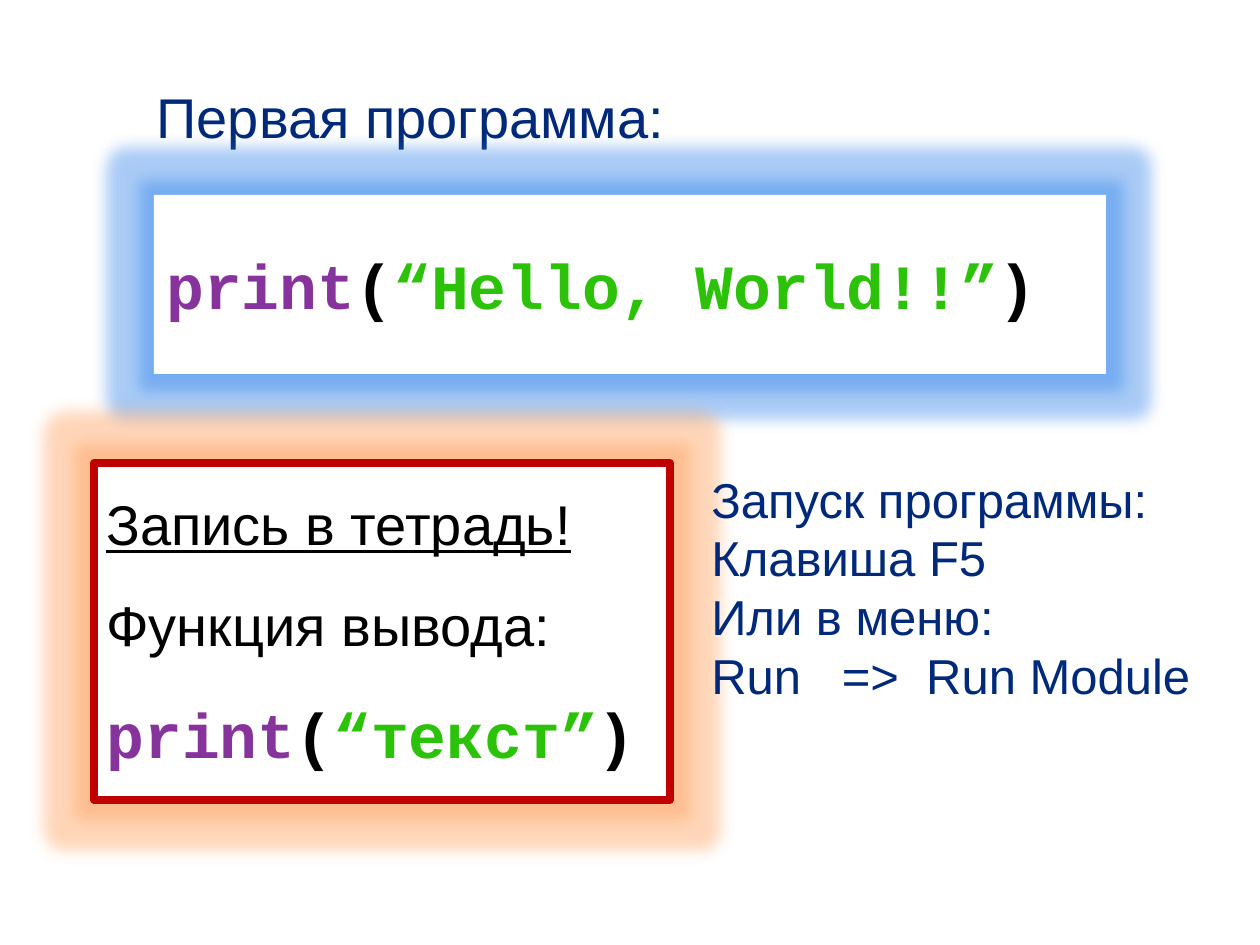
import pptx
import pptx.util
import pptx.dml.color
import pptx.enum.shapes
import pptx.enum.text
import pptx.oxml
import pptx.oxml.ns

PX = 914400 // 126
NAVY, BLACK, PURPLE, GREEN, RED = "00297A", "000000", "86349C", "2DC20A", "C00000"
WHITE, BLUE_GLOW, ORANGE_GLOW = "FFFFFF", "2A7FEA", "FF9A50"
GLOW_RADIUS = pptx.util.Pt(18)
GLOW_ALPHA = 40000

TITLE = "Первая программа:"
LAUNCH = ["Запуск программы:", "Клавиша F5", "Или в меню:", "Run   =>  Run Module"]
HEADING = "Запись в тетрадь!"
SUBHEADING = "Функция вывода:"


def print_call(argument):
    return [("print", PURPLE), ("(", BLACK), (f"“{argument}”", GREEN), (")", BLACK)]


def color(value):
    return pptx.dml.color.RGBColor.from_string(value)


def place(shape, left, top, width, height):
    shape.left, shape.top = left * PX, top * PX
    shape.width, shape.height = width * PX, height * PX


def write(shape, lines, size, first=True, spacing=None, font="Arial", bold=False, underline=False):
    frame = shape.text_frame
    for index, spans in enumerate(lines):
        para = frame.paragraphs[0] if first and index == 0 else frame.add_paragraph()
        para.alignment = pptx.enum.text.PP_ALIGN.LEFT
        para.line_spacing = spacing
        for text, hue in spans:
            span = para.add_run()
            span.text = text
            span.font.size = pptx.util.Pt(size)
            span.font.name = font
            span.font.bold = bold
            span.font.underline = underline
            span.font.color.rgb = color(hue)


def glowing_box(page, bounds, glow, outline=None):
    box = page.shapes.add_shape(pptx.enum.shapes.MSO_SHAPE.RECTANGLE, 0, 0, 0, 0)
    place(box, *bounds)
    box.fill.solid()
    box.fill.fore_color.rgb = color(WHITE)
    if outline:
        box.line.color.rgb = color(outline)
        box.line.width = pptx.util.Pt(4.5)
    else:
        box.line.fill.background()
    box.shadow.inherit = False
    effects = box.element.spPr.find(pptx.oxml.ns.qn("a:effectLst"))
    effects.append(pptx.oxml.parse_xml(
        f'<a:glow {pptx.oxml.ns.nsdecls("a")} rad="{GLOW_RADIUS}">'
        f'<a:srgbClr val="{glow}"><a:alpha val="{GLOW_ALPHA}"/></a:srgbClr></a:glow>'))
    box.text_frame.word_wrap = True
    box.text_frame.vertical_anchor = pptx.enum.text.MSO_ANCHOR.MIDDLE
    return box


def main():
    deck = pptx.Presentation()
    deck.slide_width, deck.slide_height = 1260 * PX, 945 * PX
    page = deck.slides.add_slide(deck.slide_layouts[5])

    title = page.shapes.title
    place(title, 144, 76, 893, 81)
    title.text_frame.vertical_anchor = pptx.enum.text.MSO_ANCHOR.TOP
    write(title, [[(TITLE, NAVY)]], 32)

    program = glowing_box(page, (154, 195, 952, 179), BLUE_GLOW)
    write(program, [print_call("Hello, World!!")], 36, font="Courier New", bold=True)

    note = glowing_box(page, (94, 463, 576, 337), ORANGE_GLOW, RED)
    note.text_frame.margin_bottom = 42 * PX
    write(note, [[(HEADING, BLACK)]], 32, spacing=1.5, underline=True)
    write(note, [[(SUBHEADING, BLACK)]], 32, first=False, spacing=1.5)
    write(note, [print_call("текст")], 36, first=False, spacing=1.5,
          font="Courier New", bold=True)

    launch = page.shapes.add_textbox(0, 0, 0, 0)
    place(launch, 699, 463, 507, 251)
    launch.text_frame.word_wrap = True
    write(launch, [[(line, NAVY)] for line in LAUNCH], 28)

    deck.save("out.pptx")


if __name__ == "__main__":
    main()
